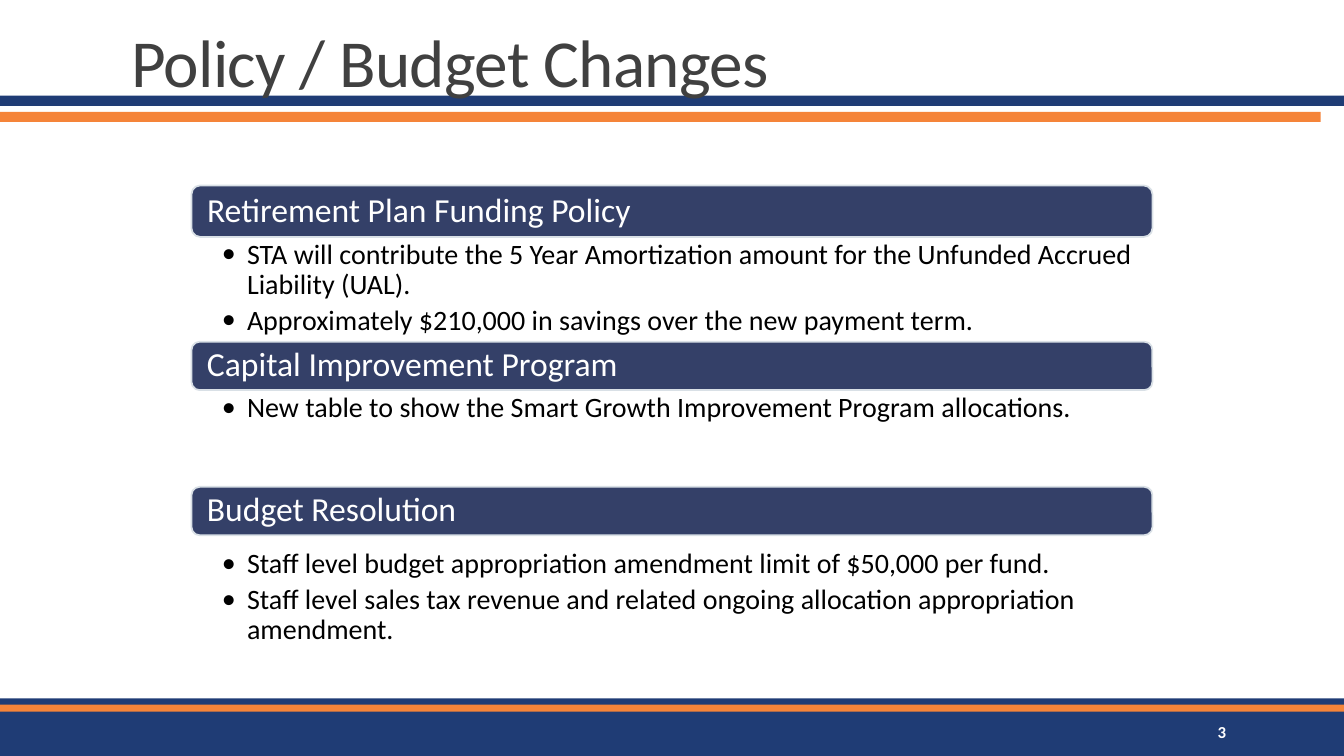
from lxml.etree import SubElement as Sub
from pptx import Presentation
from pptx.dml.color import RGBColor
from pptx.enum.shapes import MSO_SHAPE as Kind
from pptx.enum.text import MSO_ANCHOR as Anchor, MSO_AUTO_SIZE as Fit, PP_ALIGN as Align
from pptx.oxml.ns import qn
from pptx.util import Inches, Pt

NAVY = RGBColor(0x1F, 0x3C, 0x75)
ORANGE = RGBColor(0xF5, 0x84, 0x39)
SLATE = RGBColor(0x34, 0x40, 0x68)
PALE = RGBColor(0xD9, 0xE0, 0xE6)
GRAY = RGBColor(0x40, 0x40, 0x40)
WHITE = RGBColor(0xFF, 0xFF, 0xFF)
BLACK = RGBColor(0, 0, 0)

WIDE, HIGH = 13.33, 7.5
TOPICS = [
    (1.84, 0.51, 2.35, 1.04, "Retirement Plan Funding Policy", [
        "STA will contribute the 5 Year Amortization amount for the Unfunded Accrued Liability (UAL).",
        "Approximately $210,000 in savings over the new payment term."]),
    (3.39, 0.48, 3.87, 1.06, "Capital Improvement Program", [
        "New table to show the Smart Growth Improvement Program allocations."]),
    (4.83, 0.48, 5.42, 1.04, "Budget Resolution", [
        "Staff level budget appropriation amendment limit of $50,000 per fund.",
        "Staff level sales tax revenue and related ongoing allocation appropriation amendment."]),
]


def place(shape, left, top, width, height):
    shape.left, shape.top = Inches(left), Inches(top)
    shape.width, shape.height = Inches(width), Inches(height)


def write(para, text, size=20, color=BLACK, bold=False, align=Align.LEFT,
          lead=1.0, after=0, track=0, bullet=False):
    para.alignment, para.line_spacing = align, lead
    para.space_before, para.space_after = Pt(0), Pt(after)
    if bullet:
        props = para._p.get_or_add_pPr()
        props.set("marL", str(Inches(0.25)))
        props.set("indent", str(Inches(-0.25)))
        Sub(props, qn("a:buFont")).set("typeface", "Calibri")
        Sub(props, qn("a:buChar")).set("char", "•")
    run = para.add_run()
    run.text = text
    font = run.font
    font.name, font.size, font.bold = "Calibri", Pt(size), bold
    font.color.rgb = color
    if track:
        run._r.get_or_add_rPr().set("spc", str(track))


def frame(shape, anchor, left=0.1, top=0.05, right=0.1, bottom=0.05):
    body = shape.text_frame
    body.word_wrap, body.auto_size = True, Fit.NONE
    body.vertical_anchor = anchor
    body.margin_left, body.margin_top = Inches(left), Inches(top)
    body.margin_right, body.margin_bottom = Inches(right), Inches(bottom)
    return body


def block(slide, kind, box, fill):
    shape = slide.shapes.add_shape(kind, *map(Inches, box))
    shape.shadow.inherit = False
    shape.fill.solid()
    shape.fill.fore_color.rgb = fill
    shape.line.fill.background()
    return shape


def head(slide, left, top, width, height):
    block(slide, Kind.RECTANGLE, (0, top + 0.94, 13.1, 0.1), ORANGE)
    block(slide, Kind.RECTANGLE, (0, top + 0.78, WIDE, 0.1), NAVY)
    title = slide.shapes.title
    place(title, left, top, width, height)
    body = frame(title, Anchor.BOTTOM)
    write(body.paragraphs[0], "Policy / Budget Changes", size=48, color=GRAY, lead=0.85, track=-50)
    title.element.getparent().append(title.element)


def foot(slide, left, top, width, height):
    block(slide, Kind.RECTANGLE, (left, top + 0.07, width, height - 0.07), NAVY)
    block(slide, Kind.RECTANGLE, (left, top, width, 0.07), NAVY)
    block(slide, Kind.RECTANGLE, (left, top + 0.06, width, 0.07), ORANGE)
    page = slide.shapes.add_textbox(*map(Inches, (left + 10.83, top + 0.13, 1.43, 0.4)))
    body = frame(page, Anchor.MIDDLE)
    write(body.paragraphs[0], "3", size=12, color=WHITE, bold=True, align=Align.RIGHT)


def topic(slide, holder, left, width, top, height, low, deep, name, points):
    bar = block(slide, Kind.ROUNDED_RECTANGLE, (left, top, width, height), SLATE)
    bar.line.color.rgb, bar.line.width = PALE, Pt(1.25)
    body = frame(bar, Anchor.MIDDLE, left=0.13, right=0.13)
    write(body.paragraphs[0], name, size=24, color=WHITE, lead=0.9)
    place(holder, left, low, width, deep)
    body = frame(holder, Anchor.TOP, 0.3, 0.03, 0.16, 0.03)
    for i, point in enumerate(points):
        para = body.add_paragraph() if i else body.paragraphs[0]
        write(para, point, lead=0.9, after=4, bullet=True)


def main():
    deck = Presentation()
    deck.slide_width, deck.slide_height = Inches(WIDE), Inches(HIGH)
    slide = deck.slides.add_slide(deck.slide_layouts.get_by_name("Comparison"))
    lists = list(slide.placeholders)[1:]
    spare = lists.pop().element
    spare.getparent().remove(spare)
    foot(slide, 0, 6.93, WIDE, 0.57)
    head(slide, 1.2, 0.17, 11, 0.88)
    for holder, spot in zip(lists, TOPICS):
        topic(slide, holder, 1.9, 9.53, *spot)
    deck.save("out.pptx")


if __name__ == "__main__":
    main()
